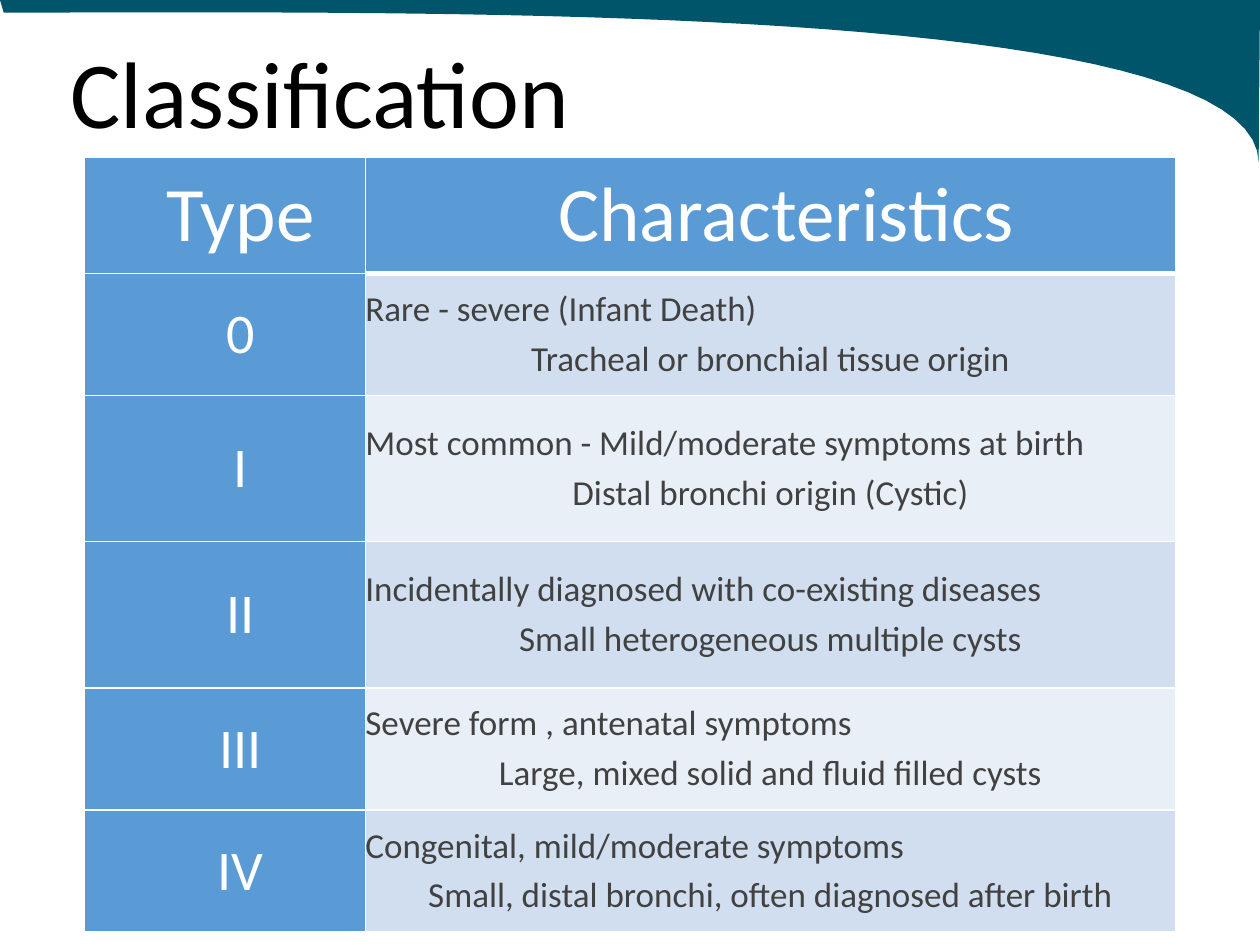
from lxml.etree import SubElement
from pptx import Presentation
from pptx.dml.color import RGBColor
from pptx.enum.text import MSO_ANCHOR as Anchor, PP_ALIGN as Align
from pptx.oxml.ns import qn
from pptx.util import Inches, Pt

COLORS = {
    "teal": "00556A",
    "blue": "5B9BD5",
    "band_dark": "D0DEEF",
    "band_light": "E9EFF7",
    "body": "414141",
    "white": "FFFFFF",
    "black": "000000",
}
FONT = "Calibri"
TABLE_PLACE = (0.67, 1.25, 8.66, 6.15)
COLUMN_WIDTHS = (2.23, 6.43)
ROW_HEIGHTS = (0.92, 0.97, 1.16, 1.16, 0.97, 0.97)
HEADINGS = ("Type", "Characteristics")
TYPES = (
    ("0", "Rare - severe (Infant Death)", "Tracheal or bronchial tissue origin"),
    ("I", "Most common - Mild/moderate symptoms at birth", "Distal bronchi origin (Cystic)"),
    ("II", "Incidentally diagnosed with co-existing diseases", "Small heterogeneous multiple cysts"),
    ("III", "Severe form , antenatal symptoms", "Large, mixed solid and fluid filled cysts"),
    ("IV", "Congenital, mild/moderate symptoms", "Small, distal bronchi, often diagnosed after birth"),
)


def color(name):
    return RGBColor.from_string(COLORS[name])


def set_values(target, values):
    for name, value in values.items():
        setattr(target, name, value)


def write_paragraph(para, text, size, tint, **layout):
    set_values(para, layout)
    span = para.add_run()
    span.text = text
    set_values(span.font, {"name": FONT, "size": Pt(size), "bold": False})
    span.font.color.rgb = color(tint)


def curve_points(points, steps=40):
    for step in range(1, steps + 1):
        t = step / steps
        weights = ((1 - t) ** 3, 3 * t * (1 - t) ** 2, 3 * t * t * (1 - t), t ** 3)
        yield tuple(
            Inches(sum(w * point[axis] for w, point in zip(weights, points)))
            for axis in (0, 1)
        )


def add_title(page, text):
    title = page.shapes.title
    set_values(title, {"left": Inches(0.51), "top": Inches(0.31),
                       "width": Inches(9.22), "height": Inches(0.94)})
    frame = title.text_frame
    set_values(frame, {"vertical_anchor": Anchor.MIDDLE, "word_wrap": True,
                       "margin_left": Inches(0.05), "margin_right": Inches(0.05),
                       "margin_top": Inches(0.04), "margin_bottom": Inches(0.04)})
    write_paragraph(frame.paragraphs[0], text, 54, "black",
                    alignment=Align.LEFT, line_spacing=0.9)
    return title


def add_swoosh(page, title):
    right_edge = ((10, 0), (10, 0.14), (9.99, 1.15), (9.99, 1.29))
    lower_edge = ((9.99, 1.29), (9.98, 0), (3.36, 0.1), (0.03, 0.1))
    builder = page.shapes.build_freeform(0, 0)
    builder.add_line_segments(
        [(Inches(10), 0), *curve_points(right_edge), *curve_points(lower_edge)]
    )
    swoosh = builder.convert_to_shape()
    swoosh.shadow.inherit = False
    swoosh.fill.solid()
    swoosh.fill.fore_color.rgb = color("teal")
    swoosh.line.fill.background()
    title.element.addprevious(swoosh.element)


def add_borders(cell, widths):
    properties = cell._tc.get_or_add_tcPr()
    for side in ("L", "R", "T", "B"):
        line = SubElement(properties, qn(f"a:ln{side}"), w=str(Pt(widths.get(side, 1))))
        fill = SubElement(line, qn("a:solidFill"))
        SubElement(fill, qn("a:srgbClr"), val=COLORS["white"])


def style_cell(cell, tint, widths):
    add_borders(cell, widths)
    cell.fill.solid()
    cell.fill.fore_color.rgb = color(tint)
    set_values(cell, {"vertical_anchor": Anchor.MIDDLE, "margin_left": 0,
                      "margin_right": 0, "margin_top": 0, "margin_bottom": 0})


def write_label(cell, text, size):
    para = cell.text_frame.paragraphs[0]
    properties = para._p.get_or_add_pPr()
    properties.set("marL", "0")
    properties.set("indent", str(Inches(0.25)))
    write_paragraph(para, text, size, "white", alignment=Align.CENTER)


def write_details(cell, first, second):
    frame = cell.text_frame
    write_paragraph(frame.paragraphs[0], first, 20, "body", alignment=Align.LEFT)
    write_paragraph(frame.add_paragraph(), second, 20, "body",
                    alignment=Align.CENTER, space_before=Pt(4))


def add_classification(page):
    place = [Inches(value) for value in TABLE_PLACE]
    table = page.shapes.add_table(len(ROW_HEIGHTS), len(COLUMN_WIDTHS), *place).table
    set_values(table, {"first_row": False, "horz_banding": False})
    for column, width in zip(table.columns, COLUMN_WIDTHS):
        column.width = Inches(width)
    for row, height in zip(table.rows, ROW_HEIGHTS):
        row.height = Inches(height)
    for index, heading in enumerate(HEADINGS):
        cell = table.cell(0, index)
        style_cell(cell, "blue", {"B": 3} if index else {})
        write_label(cell, heading, 44)
    for index, (kind, first, second) in enumerate(TYPES, start=1):
        label, details = table.cell(index, 0), table.cell(index, 1)
        style_cell(label, "blue", {})
        write_label(label, kind, 32)
        band = "band_dark" if index % 2 else "band_light"
        style_cell(details, band, {"T": 3} if index == 1 else {})
        write_details(details, first, second)


def main():
    deck = Presentation()
    set_values(deck, {"slide_width": Inches(10), "slide_height": Inches(7.5)})
    page = deck.slides.add_slide(deck.slide_layouts[5])
    title = add_title(page, "Classification")
    add_swoosh(page, title)
    add_classification(page)
    deck.save("out.pptx")


if __name__ == "__main__":
    main()
